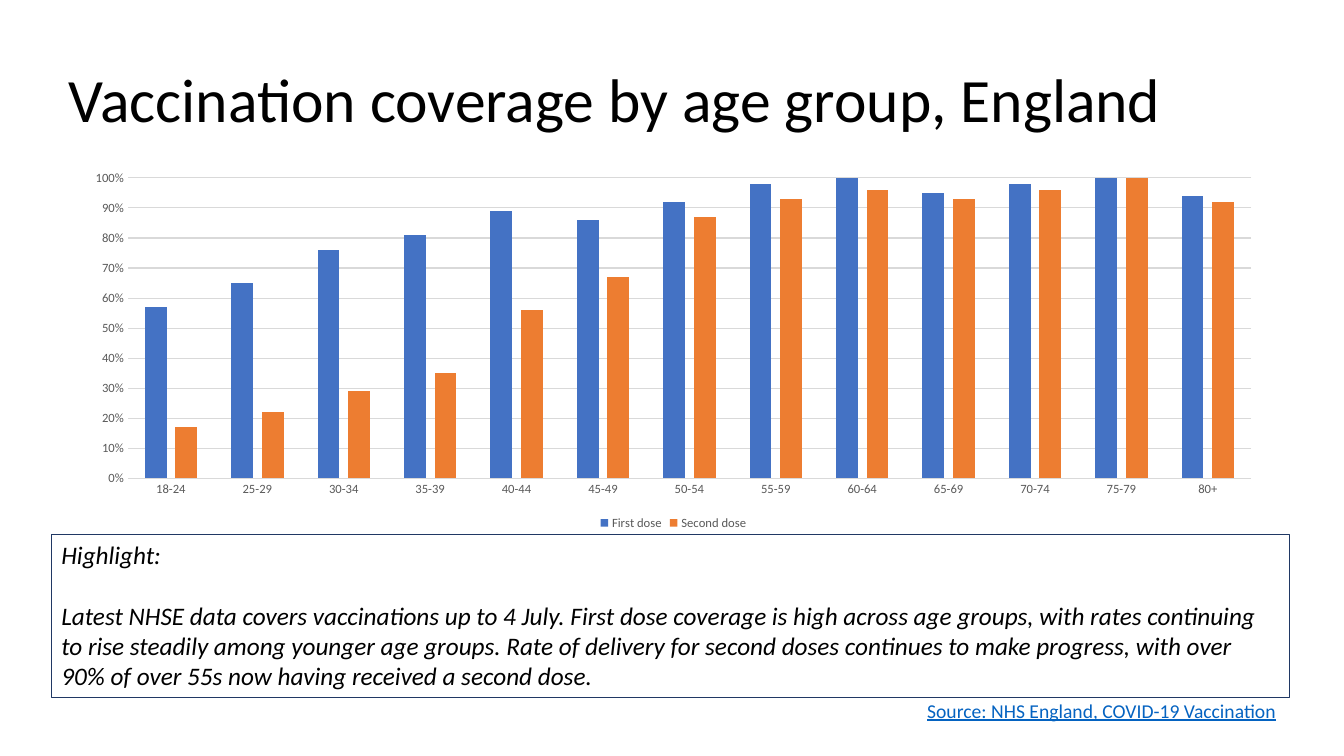
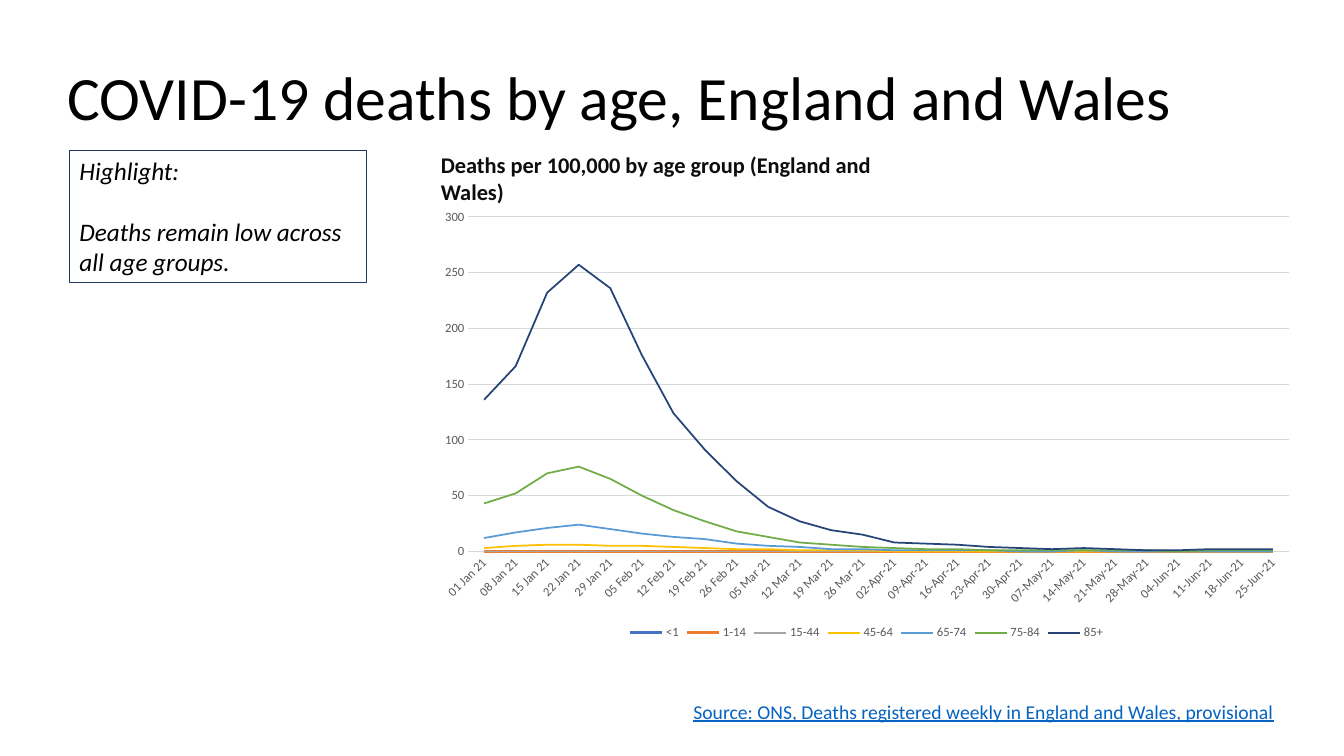
from pptx import Presentation
from pptx.chart.data import CategoryChartData
from pptx.dml.color import RGBColor
from pptx.enum.chart import XL_CHART_TYPE, XL_LEGEND_POSITION, XL_TICK_MARK
from pptx.enum.shapes import MSO_SHAPE
from pptx.enum.text import MSO_ANCHOR, MSO_AUTO_SIZE, PP_ALIGN
from pptx.util import Pt

COLUMN, LINE = XL_CHART_TYPE.COLUMN_CLUSTERED, XL_CHART_TYPE.LINE
BOTTOM, NO_TICK = XL_LEGEND_POSITION.BOTTOM, XL_TICK_MARK.NONE
RECT = MSO_SHAPE.RECTANGLE
MIDDLE, TOP = MSO_ANCHOR.MIDDLE, MSO_ANCHOR.TOP
NO_FIT, GROW = MSO_AUTO_SIZE.NONE, MSO_AUTO_SIZE.SHAPE_TO_FIT_TEXT
LEFT = PP_ALIGN.LEFT

FACE = "Calibri"
BLACK, NAVY, GRID, GREY = "000000", "203864", "D9D9D9", "595959"
BLUE, ORANGE = "4472C4", "ED7D31"

TITLE = {"size": Pt(44)}
NOTE = {"size": Pt(18), "italic": True}
LINK = {"size": Pt(14), "underline": True}
HEAD = {"size": Pt(16), "bold": True}
LABEL = {"size": Pt(9)}

AGES = ["18-24", "25-29", "30-34", "35-39", "40-44", "45-49", "50-54",
        "55-59", "60-64", "65-69", "70-74", "75-79", "80+"]
DOSES = [
    ("First dose", BLUE, [0.57, 0.65, 0.76, 0.81, 0.89, 0.86, 0.92,
                          0.98, 1, 0.95, 0.98, 1.02, 0.94]),
    ("Second dose", ORANGE, [0.17, 0.22, 0.29, 0.35, 0.56, 0.67, 0.87,
                             0.93, 0.96, 0.93, 0.96, 1.01, 0.92]),
]

WEEKS = ["01 Jan 21", "08 Jan 21", "15 Jan 21", "22 Jan 21", "29 Jan 21",
         "05 Feb 21", "12 Feb 21", "19 Feb 21", "26 Feb 21", "05 Mar 21",
         "12 Mar 21", "19 Mar 21", "26 Mar 21", "02-Apr-21", "09-Apr-21",
         "16-Apr-21", "23-Apr-21", "30-Apr-21", "07-May-21", "14-May-21",
         "21-May-21", "28-May-21", "04-Jun-21", "11-Jun-21", "18-Jun-21",
         "25-Jun-21"]
ZERO = [0] * len(WEEKS)
DEATHS = [
    ("<1", BLUE, ZERO, 2.25),
    ("1-14", ORANGE, ZERO, 2.25),
    ("15-44", "A5A5A5", ZERO, 1.25),
    ("45-64", "FFC000", [3, 5, 6, 6, 5, 5, 4, 3, 2, 2, 1, 1, 1] + [0] * 13, 1.25),
    ("65-74", "5B9BD5", [12, 17, 21, 24, 20, 16, 13, 11, 7, 5, 4, 2, 2,
                         1, 1, 1, 1, 0, 0, 1, 0, 0, 0, 0, 0, 0], 1.25),
    ("75-84", "70AD47", [43, 52, 70, 76, 65, 50, 37, 27, 18, 13, 8, 6, 4,
                         3, 2, 2, 1, 1, 1, 1, 1, 1, 0, 1, 1, 1], 1.25),
    ("85+", "264478", [136, 166, 232, 257, 236, 176, 124, 91, 63, 40, 27, 19, 15,
                       8, 7, 6, 4, 3, 2, 3, 2, 1, 1, 2, 2, 2], 1.25),
]


def paint(fill, color):
    fill.solid()
    fill.fore_color.rgb = RGBColor.from_string(color)


def apply(item, values):
    for name, value in values.items():
        setattr(item, name, value)


def set_font(font, look, color):
    apply(font, {"name": FACE, **look})
    paint(font.fill, color)


def stroke(line, color, width=0.75):
    paint(line.fill, color)
    line.width = Pt(width)


def place(shape, area):
    names = ("left", "top", "width", "height")
    apply(shape, dict(zip(names, map(Pt, area))))


def write(shape, texts, look, color, **frame):
    body = shape.text_frame
    apply(body, frame)
    body.text = "\n".join(texts)
    for para in body.paragraphs:
        para.alignment = LEFT
        set_font(para.font, look, color)
    return body.paragraphs


def add_page(deck, title, area):
    slide = deck.slides.add_slide(deck.slide_layouts[5])
    place(slide.shapes.title, area)
    paras = write(slide.shapes.title, [title], TITLE, BLACK, word_wrap=True,
                  auto_size=NO_FIT, vertical_anchor=MIDDLE)
    paras[0].line_spacing = 0.9
    return slide


def add_note(slide, text, area):
    box = slide.shapes.add_shape(RECT, *map(Pt, area))
    box.shadow.inherit = False
    box.fill.background()
    stroke(box.line, NAVY)
    paras = write(box, ["Highlight:", text], NOTE, BLACK, word_wrap=True,
                  auto_size=GROW, vertical_anchor=TOP)
    paras[0].space_after = Pt(22)


def add_label(slide, text, area, look, color):
    box = slide.shapes.add_textbox(*map(Pt, area))
    write(box, [text], look, color, word_wrap=False, auto_size=GROW)


def add_graph(slide, kind, cats, rows, area, scale, form):
    data = CategoryChartData(number_format=form)
    data.categories = cats
    for row in rows:
        data.add_series(row[0], row[2])
    chart = slide.shapes.add_chart(kind, *map(Pt, area), data).chart
    apply(chart, {"has_title": False, "has_legend": True})
    set_font(chart.font, LABEL, GREY)
    apply(chart.legend, {"position": BOTTOM, "include_in_layout": False})
    set_font(chart.legend.font, LABEL, GREY)
    for axis in (chart.category_axis, chart.value_axis):
        apply(axis, {"major_tick_mark": NO_TICK, "minor_tick_mark": NO_TICK})
        set_font(axis.tick_labels.font, LABEL, GREY)
    stroke(chart.category_axis.format.line, GRID)
    value = chart.value_axis
    apply(value, {"minimum_scale": 0, **scale})
    apply(value.tick_labels, {"number_format": form, "number_format_is_linked": False})
    value.format.line.fill.background()
    stroke(value.major_gridlines.format.line, GRID)
    chart.plots[0].vary_by_categories = False
    return chart


def add_bars(slide, area):
    scale = {"maximum_scale": 1, "major_unit": 0.1}
    chart = add_graph(slide, COLUMN, AGES, DOSES, area, scale, "0%")
    plot = chart.plots[0]
    apply(plot, {"gap_width": 156, "overlap": -40})
    for bar, row in zip(plot.series, DOSES):
        paint(bar.format.fill, row[1])


def add_lines(slide, area):
    scale = {"maximum_scale": 300, "major_unit": 50}
    chart = add_graph(slide, LINE, WEEKS, DEATHS, area, scale, "General")
    for curve, row in zip(chart.plots[0].series, DEATHS):
        curve.smooth = False
        stroke(curve.format.line, row[1], row[3])
    labels = chart.category_axis._element.txPr.bodyPr
    labels.set("rot", "-2700000")


def main():
    deck = Presentation()
    apply(deck, {"slide_width": Pt(960), "slide_height": Pt(540)})

    slide = add_page(deck, "Vaccination coverage by age group, England",
                     (41.8, 20.9, 828, 104.4))
    add_note(slide, "Latest NHSE data covers vaccinations up to 4 July. First dose "
             "coverage is high across age groups, with rates continuing to rise "
             "steadily among younger age groups. Rate of delivery for second doses "
             "continues to make progress, with over 90% of over 55s now having "
             "received a second dose.", (36.7, 381.6, 884.2, 116.6))
    add_label(slide, "Source: NHS England, COVID-19 Vaccination",
              (655.2, 495.4, 268.6, 24.5), LINK, "0563C1")
    add_bars(slide, (51.1, 116.6, 859.7, 265))

    slide = add_page(deck, "COVID-19 deaths by age, England and Wales",
                     (41, 19.4, 828, 104.4))
    add_note(slide, "Deaths remain low across all age groups.",
             (49.7, 107.3, 212.4, 94.3))
    add_label(slide, "Source: ONS, Deaths registered weekly in England and Wales, "
              "provisional", (488.2, 496.1, 433.4, 24.5), LINK, "0563C1")
    add_label(slide, "Deaths per 100,000 by age group (England and Wales)",
              (307.8, 104.4, 370, 26.6), HEAD, "0D0D0D")
    add_lines(slide, (305.3, 143.3, 627.8, 316.8))

    deck.save("out.pptx")


if __name__ == "__main__":
    main()
